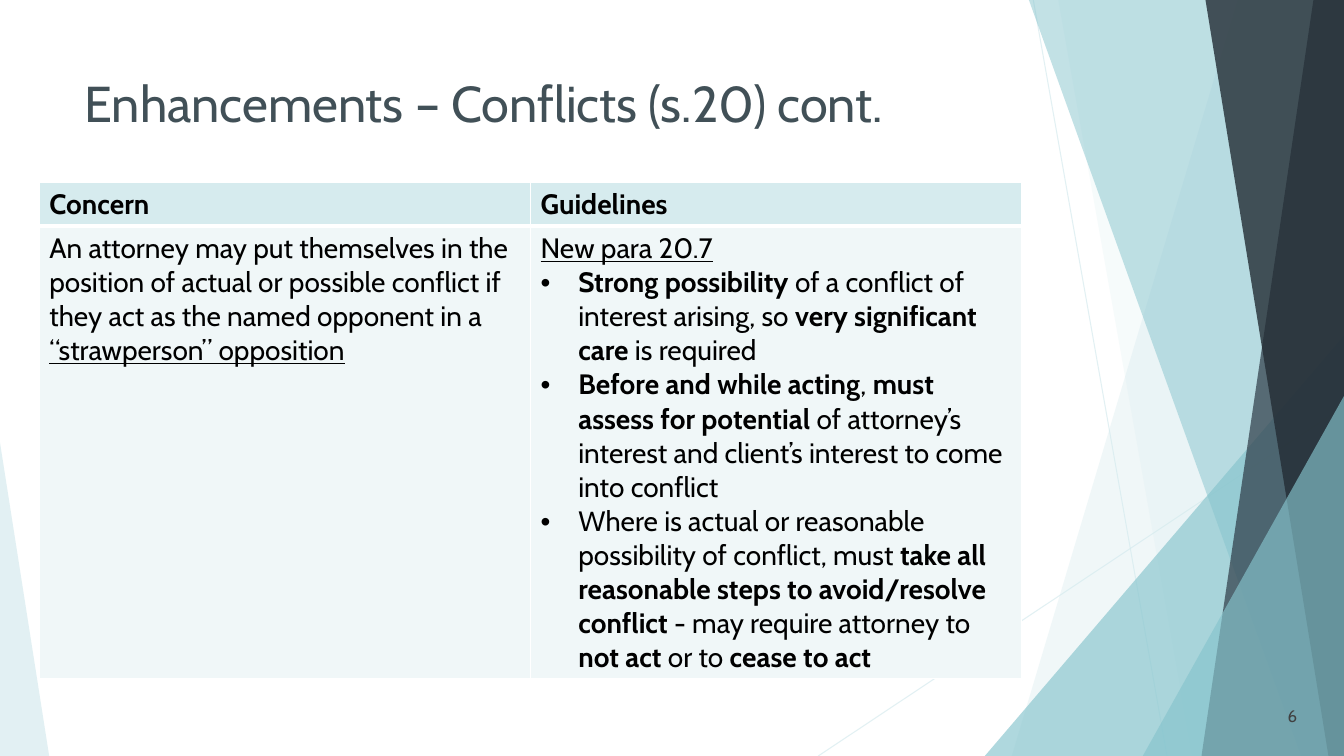
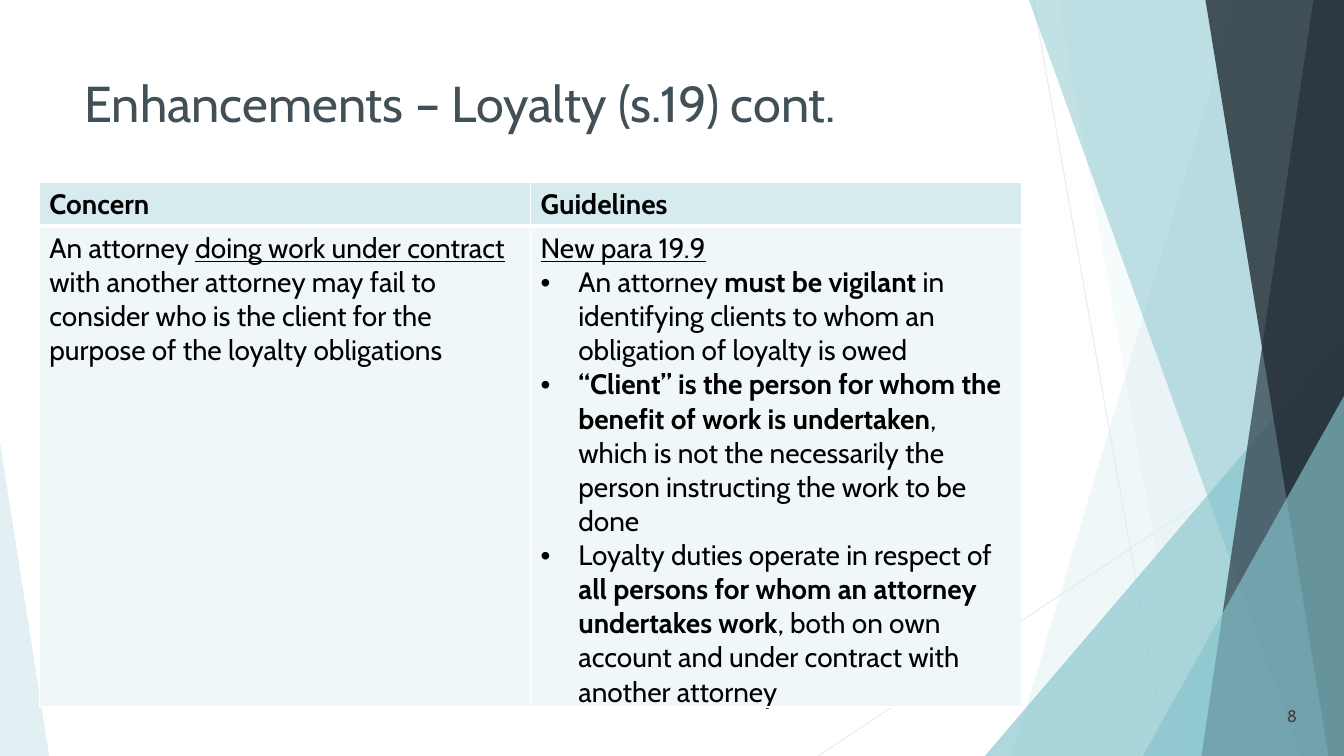
from lxml.etree import SubElement
from pptx import Presentation
from pptx.dml.color import RGBColor
from pptx.enum.shapes import MSO_CONNECTOR, MSO_SHAPE
from pptx.enum.text import MSO_ANCHOR, PP_ALIGN
from pptx.oxml.ns import qn
from pptx.util import Cm, Pt

# Shared look
WIDE, HIGH = 33.87, 19.05
FACE = "Cabin"
PALE, TEAL, SLATE, DARK = "D6EBEE", "86C4CD", "2E3B46", "232C34"
WHITE, BODY = "FFFFFF", "F0F7F8"
TITLE = {"size": Pt(36), "color": "415057"}
TEXT = {"size": Pt(20), "color": "000000"}
PAGE = {"size": Pt(12), "color": "404040"}
HEADS = ["Concern", "Guidelines"]

# Backdrop, from back to front
LINES = [(26.04, 0, 29.41, HIGH), (WIDE, 10.24, 20.62, HIGH)]
# kind, values, colour, opacity; a band has its left edge's top and foot,
# a wedge its left, top, width and peak position
PARTS = [
    ("band", (31.19, 25.5), PALE, 36),
    ("band", (26.67, 30.05), PALE, 20),
    ("wedge", (24.82, 8.46, 9.05, 1), TEAL, 66),
    ("band", (25.93, 32.79), TEAL, 50),
    ("band", (33.1, 30.28), SLATE, 70),
    ("band", (30.38, 33.48), DARK, 80),
    ("wedge", (28.8, 9.98, 5.07, 1), TEAL, 66),
    ("wedge", (0, 11.15, 1.24, 0), PALE, 70),
]

# Content: *bold*, _underlined_
SLIDES = [
    {
        "title": "Enhancements – Conflicts (s.20) cont.",
        "page": "6",
        "concern": "An attorney may put themselves in the position of actual or "
                   "possible conflict if they act as the named opponent in a "
                   "_“strawperson” opposition_",
        "para": "_New para 20.7_",
        "points": [
            "*Strong possibility *of a conflict of interest arising, so "
            "*very significant care *is required",
            "*Before and while acting*, *must assess for potential *of attorney’s "
            "interest and client’s interest to come into conflict",
            "Where is actual or reasonable possibility of conflict, must "
            "*take all reasonable steps to avoid/resolve conflict *- may require "
            "attorney to *not act* or to *cease to act*",
        ],
    },
    {
        "title": "Enhancements – Loyalty (s.19) cont.",
        "page": "8",
        "concern": "An attorney _doing work under contract_ with another attorney "
                   "may fail to consider who is the client for the purpose of the "
                   "loyalty obligations",
        "para": "_New para 19.9_",
        "points": [
            "An attorney *must be vigilant *in identifying clients to whom an "
            "obligation of loyalty is owed",
            "*“Client” is the person for whom the benefit of work is undertaken*, "
            "which is not the necessarily the person instructing the work to be done",
            "Loyalty duties operate in respect of *all persons for whom an attorney "
            "undertakes work*, both on own account and under contract with another "
            "attorney",
        ],
    },
]


def tint(code):
    return RGBColor.from_string(code)


def fade(node, share):
    """Make the solid fill directly under node partly clear."""
    SubElement(node.find(qn("a:solidFill"))[0], qn("a:alpha"), val=str(share * 1000))


def paint(shape, code, share):
    shape.shadow.inherit = False
    shape.fill.solid()
    shape.fill.fore_color.rgb = tint(code)
    shape.line.fill.background()
    fade(shape.element.spPr, share)


# Backdrop pieces
def add_line(slide, ends):
    line = slide.shapes.add_connector(MSO_CONNECTOR.STRAIGHT, *map(Cm, ends))
    line.line.color.rgb = tint(PALE)
    line.line.width = Pt(0.75)
    props = line.element.spPr
    fade(props.find(qn("a:ln")), 70)
    SubElement(props, qn("a:effectLst"))


def add_band(slide, top, foot):
    pen = slide.shapes.build_freeform(Cm(top), 0)
    spots = [(WIDE, 0), (WIDE, HIGH), (foot, HIGH)]
    pen.add_line_segments([(Cm(x), Cm(y)) for x, y in spots], close=True)
    return pen.convert_to_shape()


def add_wedge(slide, left, top, width, peak):
    spot = map(Cm, (left, top, width, HIGH - top))
    wedge = slide.shapes.add_shape(MSO_SHAPE.ISOSCELES_TRIANGLE, *spot)
    wedge.adjustments[0] = peak
    return wedge


def add_backdrop(slide):
    for ends in LINES:
        add_line(slide, ends)
    makers = {"band": add_band, "wedge": add_wedge}
    for kind, values, code, share in PARTS:
        paint(makers[kind](slide, *values), code, share)


# Text
def style(font, looks):
    for key, value in {"name": FACE, **looks}.items():
        if key == "color":
            font.color.rgb = tint(value)
        else:
            setattr(font, key, value)


def write(para, text, looks):
    for i, part in enumerate(text.split("*")):
        for j, piece in enumerate(part.split("_")):
            if piece:
                run = para.add_run()
                run.text = piece
                marks = {"bold": i % 2 == 1, "underline": j % 2 == 1}
                style(run.font, {**looks, **marks})


def add_text(slide, spot, text, looks, **frame):
    box = slide.shapes.add_textbox(*map(Cm, spot)).text_frame
    for key, value in {"word_wrap": True, **frame}.items():
        setattr(box, key, value)
    write(box.paragraphs[0], text, looks)
    return box.paragraphs[0]


def add_bullet(para):
    props = para._p.get_or_add_pPr()
    props.set("marL", str(Cm(0.95)))
    props.set("indent", str(-Cm(0.95)))
    SubElement(props, qn("a:buFont"), typeface="Arial")
    SubElement(props, qn("a:buChar"), char="•")


# Table
def frame_cell(cell, code, top, foot):
    props = cell._tc.get_or_add_tcPr()
    for side, width in {"L": 1, "R": 1, "T": top, "B": foot}.items():
        edge = SubElement(props, qn("a:ln" + side), w=str(Pt(width)))
        SubElement(SubElement(edge, qn("a:solidFill")), qn("a:srgbClr"), val=WHITE)
    cell.fill.solid()
    cell.fill.fore_color.rgb = tint(code)


def add_grid(slide, data):
    spot = map(Cm, (0.99, 4.6, 24.76, 12.48))
    grid = slide.shapes.add_table(2, 2, *spot).table
    grid.horz_banding = False
    for row, height in zip(grid.rows, (1.08, 11.4)):
        row.height = Cm(height)
    for col, head in enumerate(HEADS):
        top, body = grid.cell(0, col), grid.cell(1, col)
        frame_cell(top, PALE, 1, 3)
        frame_cell(body, BODY, 3, 1)
        write(top.text_frame.paragraphs[0], f"*{head}*", TEXT)
    write(grid.cell(1, 0).text_frame.paragraphs[0], data["concern"], TEXT)
    guide = grid.cell(1, 1).text_frame
    write(guide.paragraphs[0], data["para"], TEXT)
    for point in data["points"]:
        para = guide.add_paragraph()
        add_bullet(para)
        write(para, point, TEXT)


def add_page(deck, data):
    slide = deck.slides.add_slide(deck.slide_layouts[6])
    add_backdrop(slide)
    add_text(slide, (1.88, 1.7, 23.88, 2.51), data["title"], TITLE)
    add_grid(slide, data)
    para = add_text(slide, (31.04, 17.53, 1.9, 1.02), data["page"], PAGE,
                    vertical_anchor=MSO_ANCHOR.MIDDLE)
    para.alignment = PP_ALIGN.RIGHT


def main():
    deck = Presentation()
    deck.slide_width, deck.slide_height = Cm(WIDE), Cm(HIGH)
    for data in SLIDES:
        add_page(deck, data)
    deck.save("out.pptx")


if __name__ == "__main__":
    main()
